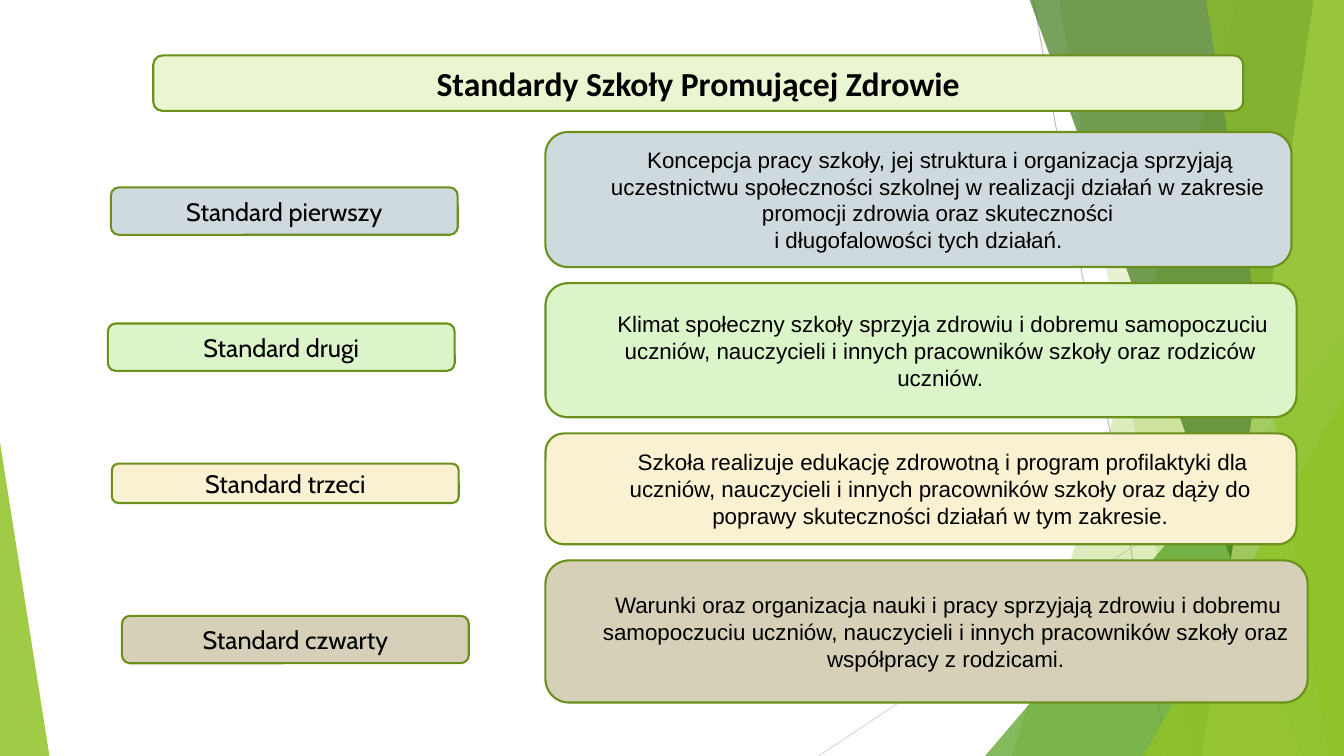
from dataclasses import dataclass

from lxml.etree import SubElement
from pptx import Presentation
from pptx.dml.color import RGBColor
from pptx.enum.shapes import MSO_CONNECTOR, MSO_SHAPE
from pptx.enum.text import MSO_ANCHOR, PP_ALIGN
from pptx.oxml.ns import qn
from pptx.util import Inches, Pt


@dataclass(frozen=True)
class Theme:
    text: str = "000000"
    border: str = "6B901C"
    title_fill: str = "EAF6D1"
    row_fills: tuple = ("CFDADF", "DBF4CA", "FAF1D2", "D6D0B8")
    leaf: str = "90C226"
    grass: str = "54A021"
    forest: str = "3F7819"
    lime: str = "C0E474"
    ray_lines: tuple = ("BFBFBF", "D9D9D9")
    title_font: tuple = ("Calibri", 24, True)
    label_font: tuple = ("Cabin", 18, False)
    body_font: tuple = ("Arial", 16, False)


THEME = Theme()
WIDTH, HEIGHT = 13.33, 7.5
LABEL_WIDTH = 3.44
PANEL_LEFT = 5.41
HANGING, FIRST_LINE = 0.38, 0.05

TITLE = "Standardy Szkoły Promującej Zdrowie"
# label, label (left, top, height), panel (top, width, height), paragraphs
STANDARDS = [
    ("Standard pierwszy", (1.1, 1.86, 0.47), (1.31, 7.4, 1.34), [
        "Koncepcja pracy szkoły, jej struktura i organizacja sprzyjają "
        "uczestnictwu społeczności szkolnej w realizacji działań w zakresie "
        "promocji zdrowia oraz skuteczności",
        "i długofalowości tych działań."]),
    ("Standard drugi", (1.07, 3.21, 0.47), (2.81, 7.45, 1.33), [
        "Klimat społeczny szkoły sprzyja zdrowiu i dobremu samopoczuciu "
        "uczniów, nauczycieli i innych pracowników szkoły oraz rodziców uczniów."]),
    ("Standard trzeci", (1.11, 4.6, 0.39), (4.3, 7.45, 1.1), [
        "Szkoła realizuje edukację zdrowotną i program profilaktyki dla "
        "uczniów, nauczycieli i innych pracowników szkoły oraz dąży do "
        "poprawy skuteczności działań w tym zakresie."]),
    ("Standard czwarty", (1.21, 6.11, 0.47), (5.56, 7.56, 1.41), [
        "Warunki oraz organizacja nauki i pracy sprzyjają zdrowiu i dobremu "
        "samopoczuciu uczniów, nauczycieli i innych pracowników szkoły oraz "
        "współpracy z rodzicami."]),
]


def set_all(target, values):
    for name, value in values.items():
        setattr(target, name, value)


def paint(shape, color, opacity=100):
    shape.shadow.inherit = False
    shape.fill.solid()
    shape.fill.fore_color.rgb = RGBColor.from_string(color)
    if opacity < 100:
        color_element = shape.fill._xPr.find(qn("a:solidFill"))[0]
        SubElement(color_element, qn("a:alpha"), val=str(opacity * 1000))


def add_ray(slide, start, end, color):
    ray = slide.shapes.add_connector(
        MSO_CONNECTOR.STRAIGHT, *(Inches(value) for value in start + end))
    set_all(ray.line, {"width": Pt(0.75)})
    ray.line.color.rgb = RGBColor.from_string(color)
    SubElement(ray._element.spPr, qn("a:effectLst"))


def add_blade(slide, top_left, bottom_left, color, opacity):
    """Full-height band from a slanted left edge to the right slide edge."""
    points = [(Inches(x), Inches(y)) for x, y in (
        (top_left, -0.01), (WIDTH, -0.01), (WIDTH, HEIGHT), (bottom_left, HEIGHT))]
    builder = slide.shapes.build_freeform(*points[0])
    builder.add_line_segments(points[1:], close=True)
    blade = builder.convert_to_shape()
    paint(blade, color, opacity)
    blade.line.fill.background()


def add_corner(slide, left, width, height, apex, color, opacity):
    """Triangle standing on the bottom slide edge, apex 0 = left, 1 = right."""
    corner = slide.shapes.add_shape(
        MSO_SHAPE.ISOSCELES_TRIANGLE, Inches(left), Inches(HEIGHT - height),
        Inches(width), Inches(height))
    corner.adjustments[0] = apex
    paint(corner, color, opacity)
    corner.line.fill.background()


def add_backdrop(slide):
    add_ray(slide, (10.25, 0), (11.58, HEIGHT), THEME.ray_lines[0])
    add_ray(slide, (WIDTH, 4.03), (8.12, HEIGHT), THEME.ray_lines[1])
    add_blade(slide, 12.28, 10.04, THEME.leaf, 30)
    add_blade(slide, 10.5, 11.83, THEME.leaf, 20)
    add_corner(slide, 9.77, 3.56, 4.17, 1, THEME.grass, 72)
    add_blade(slide, 10.21, 12.91, THEME.forest, 70)
    add_blade(slide, 13.03, 11.92, THEME.lime, 70)
    add_blade(slide, 11.96, 13.18, THEME.leaf, 65)
    add_corner(slide, 11.34, 1.99, 3.57, 1, THEME.leaf, 80)
    add_corner(slide, 0, 0.49, 3.11, 0, THEME.leaf, 85)


def add_card(slide, box, fill, paragraphs, font):
    card = slide.shapes.add_shape(
        MSO_SHAPE.ROUNDED_RECTANGLE, *(Inches(value) for value in box))
    paint(card, fill)
    card.line.width = Pt(1.5)
    card.line.color.rgb = RGBColor.from_string(THEME.border)
    frame = card.text_frame
    set_all(frame, {"word_wrap": True, "vertical_anchor": MSO_ANCHOR.MIDDLE})
    name, size, bold = font
    for index, text in enumerate(paragraphs):
        paragraph = frame.add_paragraph() if index else frame.paragraphs[0]
        paragraph.alignment = PP_ALIGN.CENTER
        run = paragraph.add_run()
        run.text = text
        set_all(run.font, {"name": name, "size": Pt(size), "bold": bold})
        run.font.color.rgb = RGBColor.from_string(THEME.text)
    return card


def indent_body(card):
    """Indent the text, with a small extra indent on the opening line."""
    for index, paragraph in enumerate(card.text_frame.paragraphs):
        properties = paragraph._p.get_or_add_pPr()
        properties.set("marL", str(Inches(HANGING)))
        properties.set("indent", str(Inches(-HANGING if index else FIRST_LINE)))


def add_standard(slide, standard, fill):
    label, (left, label_top, label_height), (top, width, height), body = standard
    add_card(slide, (left, label_top, LABEL_WIDTH, label_height),
             fill, [label], THEME.label_font)
    indent_body(add_card(slide, (PANEL_LEFT, top, width, height),
                         fill, body, THEME.body_font))


def main():
    presentation = Presentation()
    set_all(presentation, {"slide_width": Inches(WIDTH), "slide_height": Inches(HEIGHT)})
    slide = presentation.slides.add_slide(presentation.slide_layouts[6])
    add_backdrop(slide)
    add_card(slide, (1.52, 0.55, 10.81, 0.55), THEME.title_fill, [TITLE], THEME.title_font)
    for standard, fill in zip(STANDARDS, THEME.row_fills):
        add_standard(slide, standard, fill)
    presentation.save("out.pptx")


if __name__ == "__main__":
    main()
